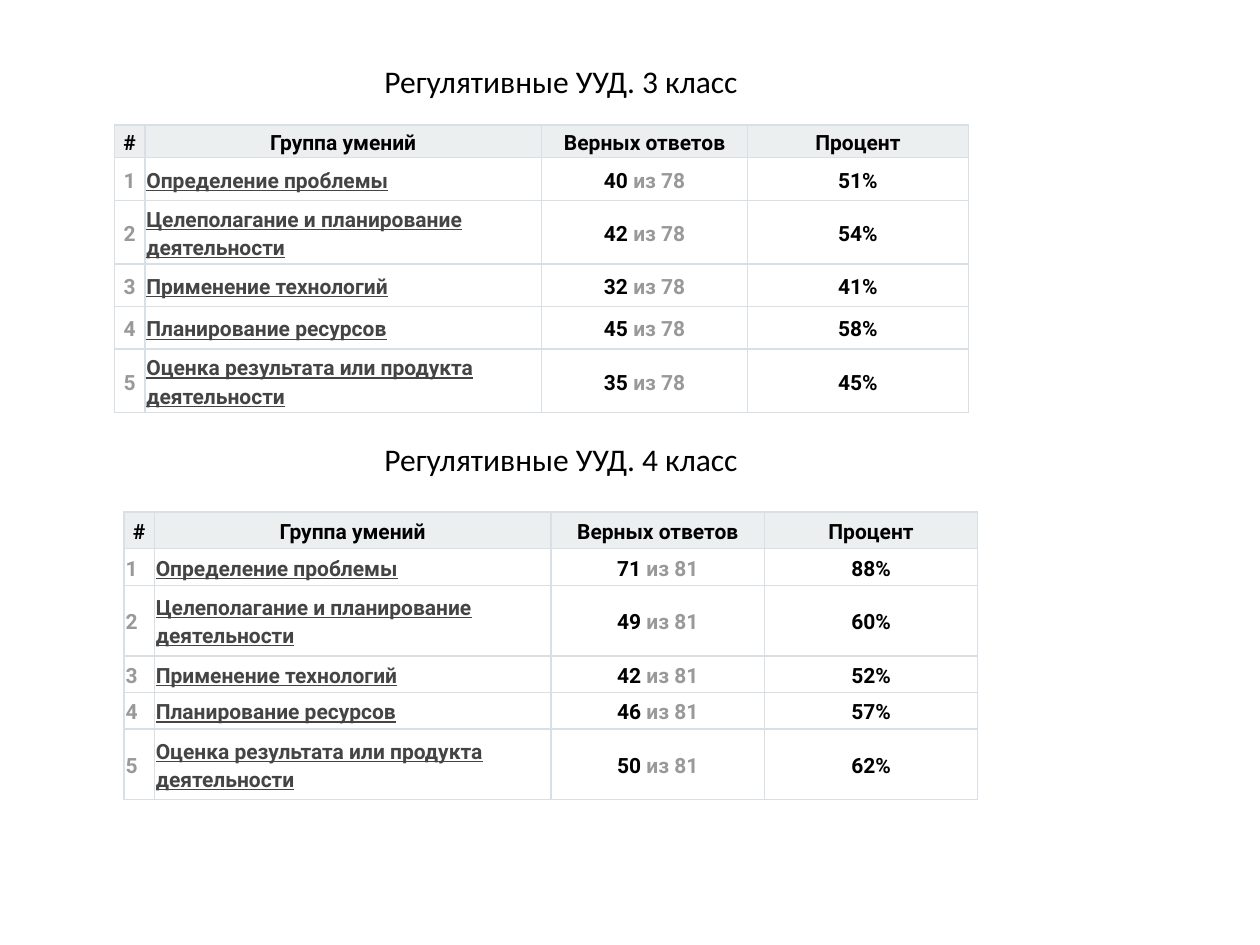
from dataclasses import dataclass

from lxml import etree
from pptx import Presentation
from pptx.dml.color import RGBColor
from pptx.enum import text
from pptx.oxml.ns import qn
from pptx.util import Cm, Pt

CENTER, LEFT = text.PP_ALIGN.CENTER, text.PP_ALIGN.LEFT
HEADERS = ["#", "Группа умений", "Верных ответов", "Процент"]
SKILLS = [
    "Определение проблемы",
    "Целеполагание и планирование деятельности",
    "Применение технологий",
    "Планирование ресурсов",
    "Оценка результата или продукта деятельности",
]


@dataclass(frozen=True)
class Theme:
    black: str = "000000"
    muted: str = "999999"
    skill: str = "444444"
    header_fill: str = "EBEFF0"
    border: str = "D9E0E5"
    title_font: str = "Calibri"
    table_font: str = "Roboto"
    title_size: int = 18
    table_size: int = 12
    line_spacing: float = 1.15


class SlideBuilder:
    def __init__(self, slide, theme):
        self.slide = slide
        self.theme = theme

    def title(self, content, left, top, width, height):
        box = self.slide.shapes.add_textbox(Cm(left), Cm(top), Cm(width), Cm(height))
        frame = box.text_frame
        frame.word_wrap = True
        frame.auto_size = text.MSO_AUTO_SIZE.SHAPE_TO_FIT_TEXT
        frame.text = content
        font = frame.paragraphs[0].runs[0].font
        font.name = self.theme.title_font
        font.size = Pt(self.theme.title_size)
        font.color.rgb = RGBColor.from_string(self.theme.black)

    def borders(self, cell):
        properties = cell._tc.get_or_add_tcPr()
        for side in ("lnL", "lnR", "lnT", "lnB"):
            line = etree.SubElement(properties, qn(f"a:{side}"), w=str(Pt(1)))
            fill = etree.SubElement(line, qn("a:solidFill"))
            etree.SubElement(fill, qn("a:srgbClr"), val=self.theme.border)

    def cell(self, cell, parts, align=CENTER, underline=False, fill=None):
        """Fill a cell with (text, colour) parts, one run for each."""
        cell.margin_left = cell.margin_right = Cm(0.03)
        cell.margin_top = cell.margin_bottom = Cm(0.03)
        cell.vertical_anchor = text.MSO_ANCHOR.MIDDLE
        self.borders(cell)
        if fill:
            cell.fill.solid()
            cell.fill.fore_color.rgb = RGBColor.from_string(fill)
        else:
            cell.fill.background()
        paragraph = cell.text_frame.paragraphs[0]
        paragraph.alignment = align
        paragraph.line_spacing = self.theme.line_spacing
        for content, color in parts:
            run = paragraph.add_run()
            run.text = content
            run.font.name = self.theme.table_font
            run.font.size = Pt(self.theme.table_size)
            run.font.bold = True
            run.font.underline = underline
            run.font.color.rgb = RGBColor.from_string(color)

    def results_table(self, left, top, widths, heights, scores, total, number_align):
        theme = self.theme
        frame = self.slide.shapes.add_table(
            len(heights), len(widths),
            Cm(left), Cm(top), Cm(sum(widths)), Cm(sum(heights)))
        table = frame.table
        table.first_row = table.horz_banding = False
        for column, width in zip(table.columns, widths):
            column.width = Cm(width)
        for row, height in zip(table.rows, heights):
            row.height = Cm(height)

        for column, header in enumerate(HEADERS):
            self.cell(table.cell(0, column), [(header, theme.black)],
                      fill=theme.header_fill)
        for number, (skill, score) in enumerate(zip(SKILLS, scores), start=1):
            self.cell(table.cell(number, 0), [(str(number), theme.muted)], number_align)
            self.cell(table.cell(number, 1), [(skill, theme.skill)], LEFT, underline=True)
            self.cell(table.cell(number, 2),
                      [(str(score), theme.black), (f" из {total}", theme.muted)])
            self.cell(table.cell(number, 3), [(f"{score / total:.0%}", theme.black)])


def main():
    presentation = Presentation()
    presentation.slide_width, presentation.slide_height = Cm(25.4), Cm(19.05)
    slide = presentation.slides.add_slide(presentation.slide_layouts[6])
    builder = SlideBuilder(slide, Theme())

    builder.results_table(2.31, 2.52, [0.61, 8, 4.15, 4.45],
                          [0.66, 0.86, 1.28, 0.86, 0.86, 1.28],
                          [40, 42, 32, 45, 35], 78, CENTER)
    builder.results_table(2.5, 10.32, [0.61, 8, 4.3, 4.3],
                          [0.74, 0.74, 1.42, 0.74, 0.74, 1.42],
                          [71, 49, 42, 46, 50], 81, LEFT)
    for grade, top in ((3, 1.12), (4, 8.74)):
        builder.title(f"Регулятивные УУД. {grade} класс", 7.5, top, 7.8, 1.02)

    presentation.save("out.pptx")


if __name__ == "__main__":
    main()
